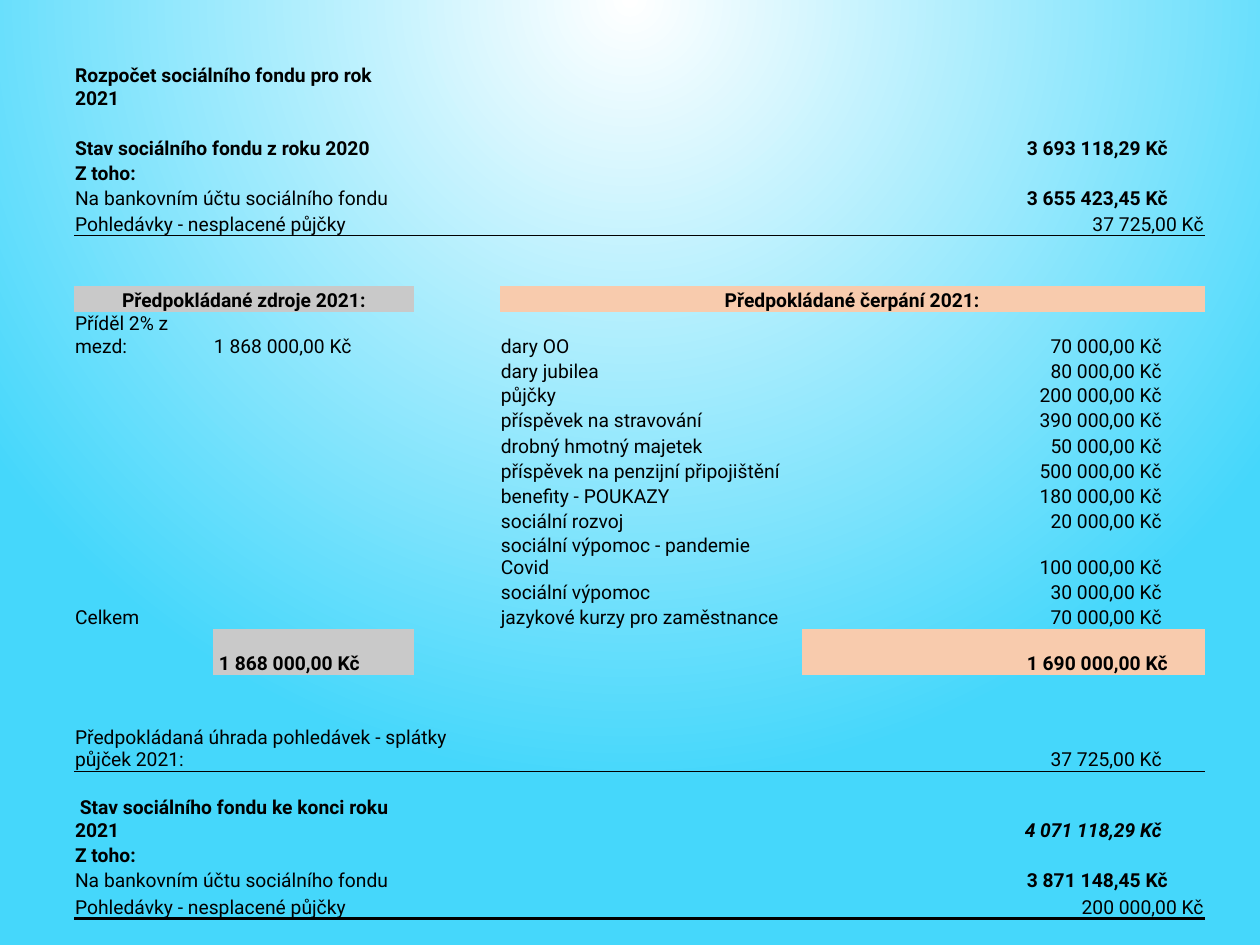
from dataclasses import dataclass

from lxml import etree
from pptx import Presentation
from pptx import util as u
from pptx.dml.color import RGBColor
from pptx.enum import text
from pptx.oxml.ns import qn

PX = u.Inches(1) / 126
FONT, POINTS = "Roboto", 11
BLACK, GREY, PEACH = "000000", "C9C9C9", "F8CBAD"
PLAIN_STYLE = "{2D5ABB26-0587-4C30-8999-92F81FD0307C}"
LEFT, CENTER, RIGHT = (text.PP_ALIGN.LEFT, text.PP_ALIGN.CENTER,
                       text.PP_ALIGN.RIGHT)

COLS = [69, 70, 201, 86, 302, 403]
ROWS = 29
ROW_H, TALL_H = 25, 46
TALL = {0: 52, 5: 26, 8: 26, 13: 26, 28: 27,
        **dict.fromkeys((9, 17, 20, 23, 25), TALL_H)}
RULES = {5: 0.5, 23: 0.5, 28: 2}  # row: width in points of the line below it

FIRST = 9  # row of the first spending item
ITEMS = [
    ("dary OO", "70 000,00 Kč"),
    ("dary jubilea", "80 000,00 Kč"),
    ("půjčky", "200 000,00 Kč"),
    ("příspěvek na stravování", "390 000,00 Kč"),
    ("drobný hmotný majetek", "50 000,00 Kč"),
    ("příspěvek na penzijní připojištění", "500 000,00 Kč"),
    ("benefity - POUKAZY", "180 000,00 Kč"),
    ("sociální rozvoj", "20 000,00 Kč"),
    ("sociální výpomoc - pandemie Covid", "100 000,00 Kč"),
    ("sociální výpomoc", "30 000,00 Kč"),
    ("jazykové kurzy pro zaměstnance", "70 000,00 Kč"),
]


@dataclass
class Entry:
    row: int
    col: int
    words: str
    span: int = 1
    bold: bool = False
    slant: bool = False
    align: text.PP_ALIGN = LEFT
    pad: int = 1
    tint: str = ""


def label(row: int, words: str, span: int = 3, bold: bool = False) -> Entry:
    return Entry(row, 0, words, span, bold)


def amount(row: int, words: str, bold: bool = False, slant: bool = False,
           pad: int = 43, tint: str = "") -> Entry:
    return Entry(row, 5, words, 1, bold, slant, RIGHT, pad, tint)


def total(row: int, words: str, tint: str = "") -> Entry:
    return amount(row, words, bold=True, pad=37, tint=tint)


def state(row: int, bank: str, loans: str) -> list[Entry]:
    """Breakdown of the fund into bank account and unpaid loans."""
    return [
        label(row, "Z toho:", 1, True),
        label(row + 1, "Na bankovním účtu sociálního fondu"),
        total(row + 1, bank),
        label(row + 2, "Pohledávky - nesplacené půjčky"),
        amount(row + 2, loans, pad=1),
    ]


ENTRIES = [
    label(0, "Rozpočet sociálního fondu pro rok 2021", bold=True),
    label(2, "Stav sociálního fondu z roku 2020", bold=True),
    total(2, "3 693 118,29 Kč"),
    *state(3, "3 655 423,45 Kč", "37 725,00 Kč"),
    Entry(8, 0, "Předpokládané zdroje 2021:", 3, True, align=CENTER, tint=GREY),
    Entry(8, 4, "Předpokládané čerpání 2021:", 2, True, align=CENTER, tint=PEACH),
    label(9, "Příděl 2% z mezd:", 2),
    Entry(9, 2, "1 868 000,00 Kč"),
    *(Entry(row, 4, name) for row, (name, _) in enumerate(ITEMS, FIRST)),
    *(amount(row, cost) for row, (_, cost) in enumerate(ITEMS, FIRST)),
    label(19, "Celkem", 1),
    Entry(20, 2, "1 868 000,00 Kč", bold=True, pad=6, tint=GREY),
    total(20, "1 690 000,00 Kč", PEACH),
    label(23, "Předpokládaná úhrada pohledávek - splátky půjček 2021:", 4),
    amount(23, "37 725,00 Kč"),
    label(25, " Stav sociálního fondu ke konci roku 2021", bold=True),
    amount(25, "4 071 118,29 Kč", bold=True, slant=True),
    *state(26, "3 871 148,45 Kč", "200 000,00 Kč"),
]


def px(n: int) -> int:
    return round(n * PX)


def rgb(code: str) -> RGBColor:
    return RGBColor.from_string(code)


def shade(slide) -> None:
    """Radial background that glows from the middle of the top edge."""
    fill = slide.background.fill
    fill.gradient()
    for stop, code in zip(fill.gradient_stops, ("FFFFFF", "45D7FB")):
        stop.color.rgb = rgb(code)
    grad = slide.element.find(".//" + qn("a:gradFill"))
    grad.remove(grad.find(qn("a:lin")))
    way = etree.SubElement(grad, qn("a:path"), {"path": "circle"})
    etree.SubElement(way, qn("a:fillToRect"), {"b": "100000"})


def reset(cell) -> None:
    """Bare cell whose empty line is as small as the text."""
    cell.margin_left = cell.margin_right = cell.margin_top = px(1)
    cell.margin_bottom = 0
    cell.vertical_anchor = text.MSO_ANCHOR.BOTTOM
    cell.fill.background()
    para = cell.text_frame.paragraphs[0]
    etree.SubElement(para._p, qn("a:endParaRPr"), {"sz": str(POINTS * 100)})


def rule(cell, width: float) -> None:
    line = etree.Element(qn("a:lnB"), {"w": str(u.Pt(width))})
    paint = etree.SubElement(line, qn("a:solidFill"))
    etree.SubElement(paint, qn("a:srgbClr"), {"val": BLACK})
    cell._tc.get_or_add_tcPr().insert(0, line)


def write(table, entry: Entry) -> None:
    cell = table.cell(entry.row, entry.col)
    if entry.span > 1:
        cell.merge(table.cell(entry.row, entry.col + entry.span - 1))
    if entry.tint:
        cell.fill.solid()
        cell.fill.fore_color.rgb = rgb(entry.tint)
    if entry.align == RIGHT:
        cell.margin_right = px(entry.pad)
    else:
        cell.margin_left = px(entry.pad)
    para = cell.text_frame.paragraphs[0]
    para.text = entry.words
    para.alignment = entry.align
    font = para.runs[0].font
    font.name, font.size = FONT, u.Pt(POINTS)
    font.bold, font.italic = entry.bold, entry.slant
    font.color.rgb = rgb(BLACK)


def main() -> None:
    deck = Presentation()
    deck.slide_width, deck.slide_height = u.Inches(10), u.Inches(7.5)
    slide = deck.slides.add_slide(deck.slide_layouts[6])
    shade(slide)

    highs = [TALL.get(row, ROW_H) for row in range(ROWS)]
    table = slide.shapes.add_table(ROWS, len(COLS), px(74), px(58),
                                   px(sum(COLS)), px(sum(highs))).table
    table.first_row = table.horz_banding = False
    table._tbl.tblPr.find(qn("a:tableStyleId")).text = PLAIN_STYLE
    for col, wide in zip(table.columns, COLS):
        col.width = px(wide)
    for row, high in zip(table.rows, highs):
        row.height = px(high)
    for cell in table.iter_cells():
        reset(cell)
    for row, width in RULES.items():
        for cell in table.rows[row].cells:
            rule(cell, width)
    for entry in ENTRIES:
        write(table, entry)
    deck.save("out.pptx")


if __name__ == "__main__":
    main()
